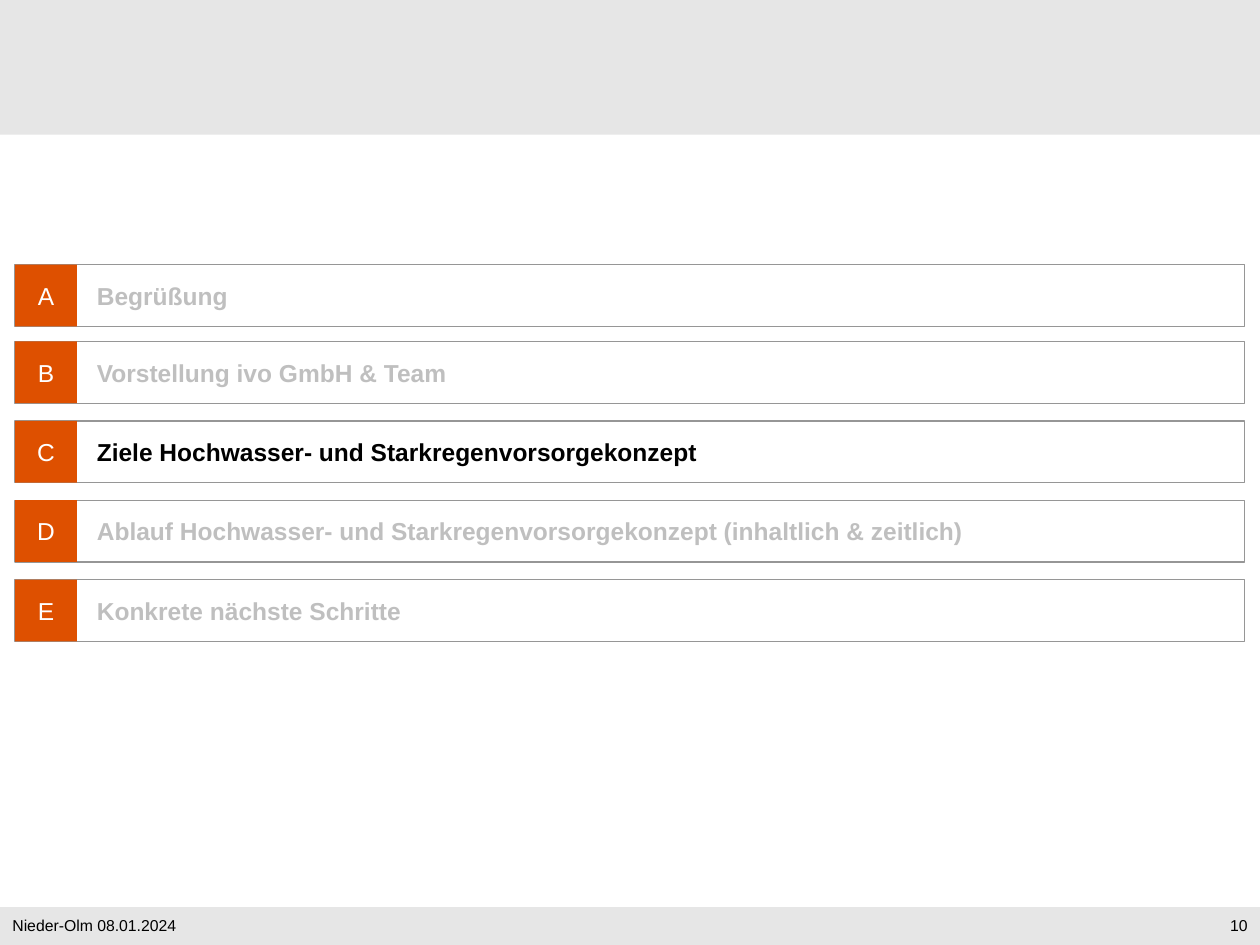
"""Build an agenda slide with lettered rows and one active topic."""
from pptx import Presentation
from pptx import util as u
from pptx.dml.color import RGBColor
from pptx.enum import shapes, text

GREY, EDGE, ORANGE = "E6E6E6", "969696", "DE5000"
PALE, BLACK, WHITE = "BFBFBF", "000000", "FFFFFF"
LEFT, CENTER, RIGHT = text.PP_ALIGN.LEFT, text.PP_ALIGN.CENTER, text.PP_ALIGN.RIGHT


def tint(code):
    return RGBColor.from_string(code)


class Deck:
    font = "Arial"
    side = 0.49

    def __init__(self, wide, high):
        self.prs = Presentation()
        self.prs.slide_width = u.Inches(wide)
        self.prs.slide_height = u.Inches(high)
        self.slide = self.prs.slides.add_slide(self.prs.slide_layouts[6])

    def letter(self, shape, words, size, color, bold=False, align=LEFT):
        frame = shape.text_frame
        frame.word_wrap = True
        frame.vertical_anchor = text.MSO_ANCHOR.MIDDLE
        frame.margin_top = frame.margin_bottom = 0
        para = frame.paragraphs[0]
        para.alignment = align
        run = para.add_run()
        run.text = words
        run.font.name = self.font
        run.font.size = u.Pt(size)
        run.font.bold = bold
        run.font.color.rgb = tint(color)

    def label(self, home, box, words, size, color, **style):
        shape = home.shapes.add_textbox(*map(u.Inches, box))
        self.letter(shape, words, size, color, **style)

    def rect(self, home, box, fill=None, line=None):
        shape = home.shapes.add_shape(
            shapes.MSO_SHAPE.RECTANGLE, *map(u.Inches, box))
        shape.shadow.inherit = False
        if fill:
            shape.fill.solid()
            shape.fill.fore_color.rgb = tint(fill)
        else:
            shape.fill.background()
        if line:
            shape.line.color.rgb = tint(line)
            shape.line.width = u.Pt(0.75)
        else:
            shape.line.fill.background()
        return shape

    def row(self, top, mark, words, color):
        group = self.slide.shapes.add_group_shape()
        self.label(group, (0.67, top, 9.22, self.side), words, 14, color, bold=True)
        self.rect(group, (0.12, top, 9.76, self.side), line=EDGE)
        tile = self.rect(group, (0.12, top, self.side, self.side), fill=ORANGE)
        self.letter(tile, mark, 14, WHITE, align=CENTER)


def main():
    deck = Deck(10, 7.5)
    page = deck.slide
    deck.rect(page, (0, 7.2, 10, 0.3), fill=GREY)
    deck.rect(page, (0, 0, 10, 1.07), fill=GREY)
    deck.label(page, (0, 7.22, 7.68, 0.24), "Nieder-Olm 08.01.2024", 9, BLACK)
    deck.label(page, (9.25, 7.22, 0.75, 0.24), "10", 9, BLACK, align=RIGHT)

    topics = (
        (2.1, "Begrüßung"),
        (2.71, "Vorstellung ivo GmbH & Team"),
        (3.34, "Ziele Hochwasser- und Starkregenvorsorgekonzept"),
        (3.97, "Ablauf Hochwasser- und Starkregenvorsorgekonzept (inhaltlich & zeitlich)"),
        (4.6, "Konkrete nächste Schritte"),
    )
    for mark, (top, words) in zip("ABCDE", topics):
        deck.row(top, mark, words, BLACK if mark == "C" else PALE)
    deck.prs.save("out.pptx")


if __name__ == "__main__":
    main()
